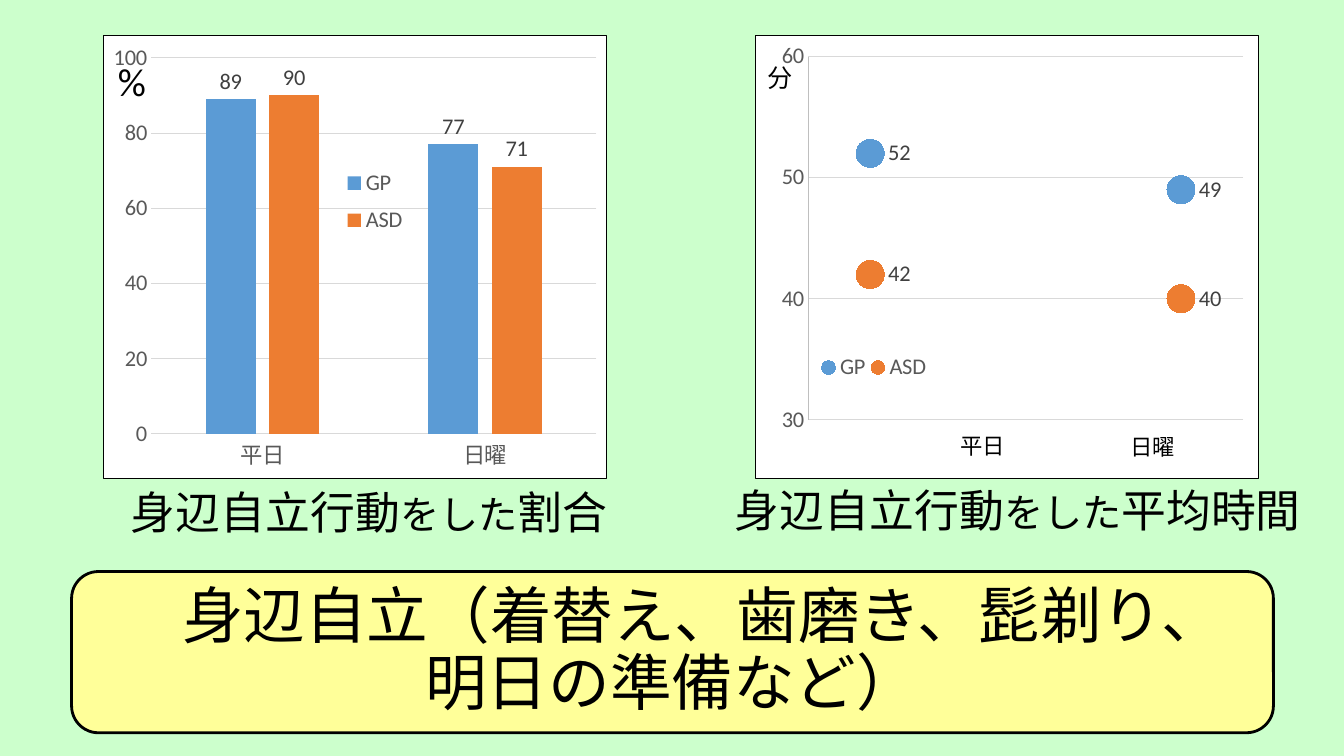
"""Build the slide on self-care behaviour: share of people and mean time by day."""
from dataclasses import dataclass

from lxml.etree import SubElement
from pptx import Presentation
from pptx.chart.chart import Chart
from pptx.chart.data import CategoryChartData, XyChartData
from pptx.chart.datalabel import DataLabels
from pptx.dml.color import RGBColor
from pptx.enum.chart import XL_CHART_TYPE as ChartType
from pptx.enum.chart import XL_LABEL_POSITION as LabelPosition
from pptx.enum.chart import XL_LEGEND_POSITION as LegendPosition
from pptx.enum.chart import XL_MARKER_STYLE as MarkerStyle
from pptx.enum.chart import XL_TICK_LABEL_POSITION as TickLabels
from pptx.enum.chart import XL_TICK_MARK as TickMark
from pptx.enum.shapes import MSO_SHAPE as Preset
from pptx.enum.text import MSO_ANCHOR as Anchor
from pptx.enum.text import MSO_AUTO_SIZE as AutoSize
from pptx.enum.text import PP_ALIGN as Align
from pptx.oxml import parse_xml
from pptx.oxml.ns import nsdecls, qn
from pptx.slide import Slide
from pptx.text.text import Font, TextFrame
from pptx.util import Inches, Pt

LATIN, JAPANESE = "Calibri", "Noto Sans CJK JP"
DAYS = ("平日", "日曜")
GROUP_COLORS = {"GP": "5B9BD5", "ASD": "ED7D31"}
SHARES = {"GP": (89, 77), "ASD": (90, 71)}
MINUTES = {"GP": (52, 49), "ASD": (42, 40)}
Box = tuple[float, float, float, float]


@dataclass
class Panel:
    box: Box
    plot: Box
    legend: Box
    low: int
    high: int
    step: int
    label_position: LabelPosition


@dataclass
class Label:
    box: Box
    phrases: list[tuple[str, int]]


SHARE_PANEL = Panel((1.02, 0.35, 5, 4.4), (0.095, 0.05, 0.885, 0.85),
                    (0.47, 0.28, 0.14, 0.19), 0, 100, 20, LabelPosition.OUTSIDE_END)
MINUTES_PANEL = Panel((7.49, 0.35, 5, 4.4), (0.104, 0.047, 0.865, 0.821),
                      (0.12, 0.71, 0.23, 0.08), 30, 60, 10, LabelPosition.RIGHT)
ACTION = [("身辺自立行動", 32), ("をした", 28)]
LABELS = [
    Label((1.07, 0.32, 0.66, 0.77), [("%", 28)]),
    Label((7.51, 0.2, 0.66, 0.77), [("分", 18)]),
    Label((9.43, 4.22, 0.66, 0.39), [(DAYS[0], 16)]),
    Label((11.11, 4.23, 0.66, 0.39), [(DAYS[1], 16)]),
    Label((1.2, 4.63, 6.68, 0.77), [*ACTION, ("割合", 32)]),
    Label((7.19, 4.61, 5.91, 0.77), [*ACTION, ("平均時間", 32)]),
]


def rgb(color: str) -> RGBColor:
    return RGBColor.from_string(color)


def inches(box: Box) -> list[Inches]:
    return [Inches(length) for length in box]


def style_font(font: Font, size: int, color: str, name: str = LATIN) -> None:
    font.size, font.name, font.bold = Pt(size), name, False
    font.color.rgb = rgb(color)


def style_line(line, color: str, width: float = 0.75) -> None:
    line.color.rgb = rgb(color)
    line.width = Pt(width)


def fill_text(frame: TextFrame, phrases: list[tuple[str, int]], name: str = LATIN) -> None:
    frame.word_wrap, frame.auto_size = True, AutoSize.NONE
    frame.vertical_anchor = Anchor.BOTTOM
    paragraph = frame.paragraphs[0]
    paragraph.line_spacing = 0.9
    for text, size in phrases:
        run = paragraph.add_run()
        run.text = text
        style_font(run.font, size, "000000", name)
        SubElement(run._r.get_or_add_rPr(), qn("a:ea"), typeface=JAPANESE)


def set_layout(parent, box: Box, index: int, inner: bool = False) -> None:
    for old in parent.findall(qn("c:layout")):
        parent.remove(old)
    target = '<c:layoutTarget val="inner"/>' if inner else ""
    modes = "".join(f'<c:{axis}Mode val="edge"/>' for axis in "xy")
    sizes = "".join(f'<c:{key} val="{value}"/>' for key, value in zip("xywh", box))
    parent.insert(index, parse_xml(
        f'<c:layout {nsdecls("c")}><c:manualLayout>{target}{modes}{sizes}'
        "</c:manualLayout></c:layout>"))


def frame_chart(chart: Chart) -> None:
    chart._chartSpace.find(qn("c:chart")).addnext(parse_xml(
        f'<c:spPr {nsdecls("c", "a")}><a:solidFill><a:srgbClr val="FFFFFF"/></a:solidFill>'
        '<a:ln w="9525"><a:solidFill><a:srgbClr val="000000"/></a:solidFill></a:ln></c:spPr>'))


def add_panel(slide: Slide, panel: Panel, kind: ChartType, data) -> Chart:
    chart = slide.shapes.add_chart(kind, *inches(panel.box), data).chart
    chart.has_title = False
    style_font(chart.font, 10, "000000")
    frame_chart(chart)
    set_layout(chart._chartSpace.chart.plotArea, panel.plot, 0, inner=True)

    chart.has_legend = True
    chart.legend.position = LegendPosition.BOTTOM
    chart.legend.include_in_layout = True
    style_font(chart.legend.font, 16, "595959")
    set_layout(chart.legend._element, panel.legend, 1)

    scale = chart.value_axis
    scale.minimum_scale, scale.maximum_scale = panel.low, panel.high
    scale.major_unit = panel.step
    scale.has_major_gridlines = True
    style_line(scale.major_gridlines.format.line, "D9D9D9")
    for axis in (scale, chart.category_axis):
        axis.major_tick_mark = axis.minor_tick_mark = TickMark.NONE
        axis.tick_label_position = TickLabels.NEXT_TO_AXIS
        style_font(axis.tick_labels.font, 16, "595959")

    chart.plots[0].vary_by_categories = False
    for group in chart.plots[0].series:
        values = DataLabels(group._element.get_or_add_dLbls())
        values.show_value = True
        values.position = panel.label_position
        style_font(values.font, 16, "404040")
    return chart


def add_minutes_chart(slide: Slide) -> None:
    data = XyChartData()
    for name, minutes in MINUTES.items():
        group = data.add_series(name)
        for day, value in enumerate(minutes, start=1):
            group.add_data_point(day, value)
    chart = add_panel(slide, MINUTES_PANEL, ChartType.XY_SCATTER, data)
    days = chart.category_axis
    days.minimum_scale, days.maximum_scale = 0.8, 2.2
    days.has_major_gridlines = days.visible = False
    style_line(chart.value_axis.format.line, "BFBFBF")
    for group in chart.plots[0].series:
        color = GROUP_COLORS[group.name]
        group.format.line.fill.background()
        group.marker.style, group.marker.size = MarkerStyle.CIRCLE, 20
        group.marker.format.fill.solid()
        group.marker.format.fill.fore_color.rgb = rgb(color)
        style_line(group.marker.format.line, color)


def add_share_chart(slide: Slide) -> None:
    data = CategoryChartData()
    data.categories = DAYS
    for name, shares in SHARES.items():
        data.add_series(name, shares)
    chart = add_panel(slide, SHARE_PANEL, ChartType.COLUMN_CLUSTERED, data)
    style_line(chart.category_axis.format.line, "D9D9D9")
    chart.value_axis.format.line.fill.background()
    bars = chart.plots[0]
    bars.gap_width, bars.overlap = 219, -27
    for group in bars.series:
        group.format.fill.solid()
        group.format.fill.fore_color.rgb = rgb(GROUP_COLORS[group.name])


def add_banner(slide: Slide) -> None:
    banner = slide.shapes.add_shape(Preset.ROUNDED_RECTANGLE, *inches((0.71, 5.67, 11.92, 1.6)))
    banner.shadow.inherit = False
    banner.fill.solid()
    banner.fill.fore_color.rgb = rgb("FFFF99")
    style_line(banner.line, "000000", 2)


def place_title(slide: Slide) -> None:
    title = slide.shapes.title
    title.left, title.top, title.width, title.height = inches((1.67, 5.93, 9.99, 1.25))
    fill_text(title.text_frame, [("身辺自立（着替え、歯磨き、髭剃り、明日の準備など）", 44)], JAPANESE)
    title.text_frame.paragraphs[0].alignment = Align.CENTER
    slide.shapes._spTree.append(title._element)


def main() -> None:
    deck = Presentation()
    deck.slide_width, deck.slide_height = Inches(13.33), Inches(7.5)
    slide = deck.slides.add_slide(deck.slide_layouts[5])
    slide.background.fill.solid()
    slide.background.fill.fore_color.rgb = rgb("CCFFCC")
    add_banner(slide)
    add_minutes_chart(slide)
    add_share_chart(slide)
    place_title(slide)
    for label in LABELS:
        fill_text(slide.shapes.add_textbox(*inches(label.box)).text_frame, label.phrases)
    deck.save("out.pptx")


if __name__ == "__main__":
    main()
